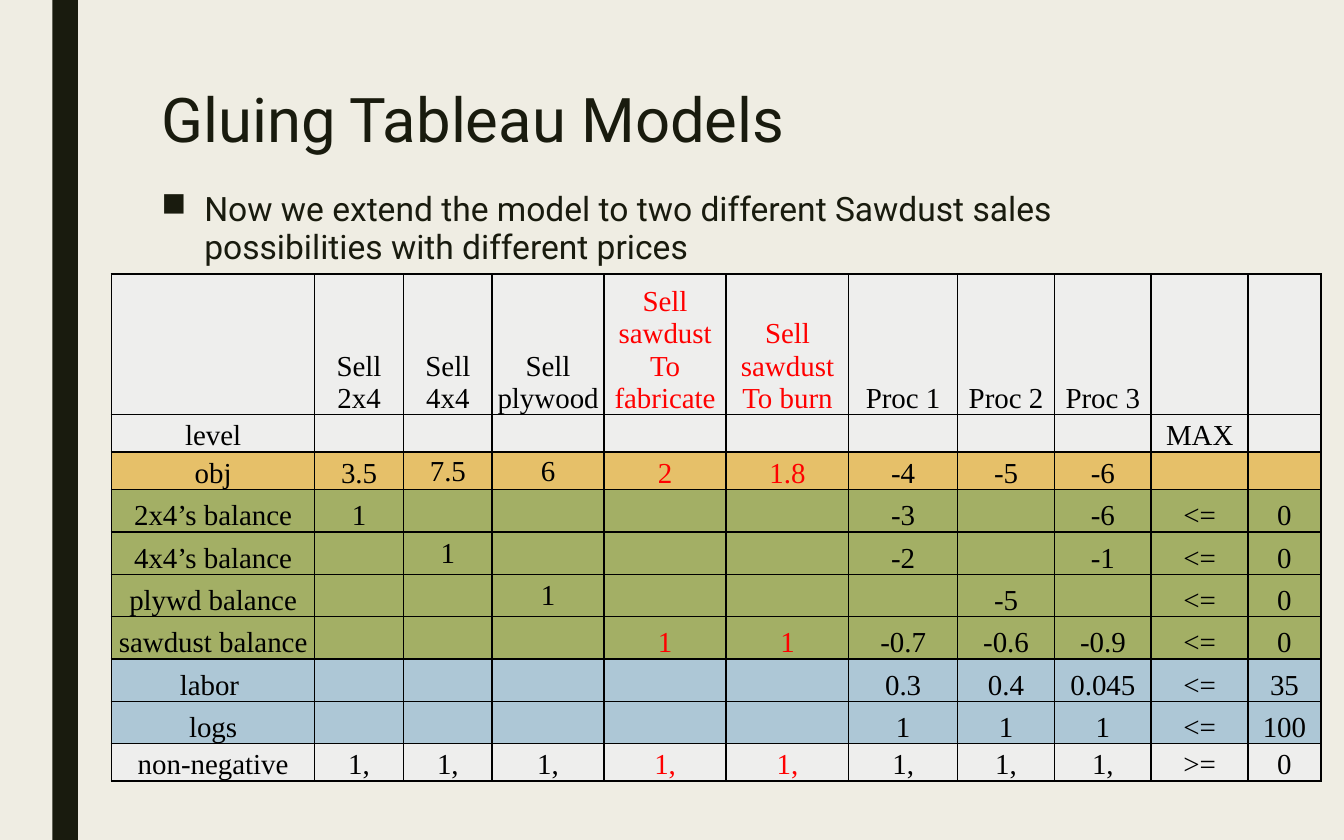
from lxml.etree import SubElement
from pptx import Presentation
from pptx.dml.color import RGBColor
from pptx.enum.shapes import MSO_SHAPE
from pptx.enum.text import MSO_ANCHOR, PP_ALIGN
from pptx.oxml.ns import qn
from pptx.util import Inches, Pt

WIDE, HIGH = Inches(10), Inches(6.25)
HUES = {
    "back": "EFEDE3", "dark": "191B0E", "black": "000000", "red": "FF0000",
    "pale": "EEEEED", "gold": "E6C069", "green": "A3AF65", "blue": "ADC7D6",
}
COLS = [1.51, 0.66, 0.66, 0.83, 0.91, 0.91, 0.81, 0.72, 0.72, 0.72, 0.54]
SIZE = 15.5
RED_COLS = (4, 5)
MID_COLS = (2, 3)
MID_ROWS = range(2, 6)
ROWS = [
    ("pale", 1.0, ["", "Sell 2x4", "Sell 4x4", "Sell plywood", "Sell sawdust\nTo fabricate",
                   "Sell sawdust\nTo burn", "Proc 1", "Proc 2", "Proc 3", "", ""]),
    ("pale", 0.28, ["level", "", "", "", "", "", "", "", "", "MAX", ""]),
    ("gold", 0.28, ["obj", "3.5", "7.5", "6", "2", "1.8", "-4", "-5", "-6", "", ""]),
    ("green", 0.315, ["2x4’s balance", "1", "", "", "", "", "-3", "", "-6", "<=", "0"]),
    ("green", 0.315, ["4x4’s balance", "", "1", "", "", "", "-2", "", "-1", "<=", "0"]),
    ("green", 0.315, ["plywd balance", "", "", "1", "", "", "", "-5", "", "<=", "0"]),
    ("green", 0.315, ["sawdust balance", "", "", "", "1", "1", "-0.7", "-0.6", "-0.9", "<=", "0"]),
    ("blue", 0.315, ["labor ", "", "", "", "", "", "0.3", "0.4", "0.045", "<=", "35"]),
    ("blue", 0.315, ["logs", "", "", "", "", "", "1", "1", "1", "<=", "100"]),
    ("pale", 0.28, ["non-negative"] + ["1,"] * 8 + [">=", "0"]),
]


def tint(name):
    return RGBColor.from_string(HUES[name])


def share(left, top, width, height):
    return (round(WIDE * left / 100), round(HIGH * top / 100),
            round(WIDE * width / 100), round(HIGH * height / 100))


def write(frame, text, font="Roboto", size=18, hue="dark", align=PP_ALIGN.LEFT,
          lead=1.0, before=0, after=0, pads=(0.08, 0.04, 0.08, 0.04),
          anchor=MSO_ANCHOR.TOP, mark=None):
    frame.word_wrap = True
    frame.vertical_anchor = anchor
    (frame.margin_left, frame.margin_top,
     frame.margin_right, frame.margin_bottom) = map(Inches, pads)
    for i, line in enumerate(text.split("\n")):
        para = frame.add_paragraph() if i else frame.paragraphs[0]
        para.alignment = align
        para.line_spacing = lead
        para.space_before, para.space_after = Pt(before), Pt(after)
        if mark:
            props = para._p.get_or_add_pPr()
            props.set("marL", str(Inches(0.32)))
            props.set("indent", str(Inches(-0.32)))
            SubElement(props, qn("a:buChar"), char=mark)
        if line:
            run = para.add_run()
            run.text = line
            run.font.name, run.font.size = font, Pt(size)
            run.font.color.rgb = tint(hue)
        else:
            SubElement(para._p, qn("a:endParaRPr"), sz=str(round(size * 100)))


def edge(cell):
    props = cell._tc.get_or_add_tcPr()
    for side in ("lnL", "lnR", "lnT", "lnB"):
        line = SubElement(props, qn(f"a:{side}"), w=str(Pt(1)))
        fill = SubElement(line, qn("a:solidFill"))
        SubElement(fill, qn("a:srgbClr"), val=HUES["black"])


def add_bar(slide, box):
    bar = slide.shapes.add_shape(MSO_SHAPE.RECTANGLE, *box)
    bar.shadow.inherit = False
    bar.fill.solid()
    bar.fill.fore_color.rgb = tint("dark")
    bar.line.fill.background()


def add_title(slide, box):
    title = slide.shapes.title
    title.left, title.top, title.width, title.height = box
    write(title.text_frame, "Gluing Tableau Models", size=33, lead=0.89)


def add_body(slide, box):
    body = slide.shapes.add_textbox(*box)
    write(body.text_frame,
          "Now we extend the model to two different Sawdust sales possibilities "
          "with different prices", lead=0.94, before=7.5, after=1.5, mark="■")


def add_grid(slide, box):
    left, top, width, height = box
    grid = slide.shapes.add_table(len(ROWS), len(COLS), *box).table
    grid.first_row = grid.horz_banding = False
    for col, part in zip(grid.columns, COLS):
        col.width = round(width * part / sum(COLS))
    total = sum(part for _, part, _ in ROWS)
    for r, (hue, part, texts) in enumerate(ROWS):
        grid.rows[r].height = round(height * part / total)
        for c, text in enumerate(texts):
            cell = grid.cell(r, c)
            mid = r in MID_ROWS and c in MID_COLS
            edge(cell)
            cell.fill.solid()
            cell.fill.fore_color.rgb = tint(hue)
            write(cell.text_frame, text, font="Times New Roman", size=SIZE,
                  hue="red" if c in RED_COLS else "black",
                  align=PP_ALIGN.CENTER, pads=(0, 0, 0, 0))
            cell.vertical_anchor = MSO_ANCHOR.MIDDLE if mid else MSO_ANCHOR.BOTTOM
            cell.margin_left = cell.margin_top = cell.margin_right = Inches(0.01)
            cell.margin_bottom = 0


def main():
    deck = Presentation()
    deck.slide_width, deck.slide_height = WIDE, HIGH
    slide = deck.slides.add_slide(deck.slide_layouts[5])
    slide.background.fill.solid()
    slide.background.fill.fore_color.rgb = tint("back")
    add_bar(slide, share(3.9, 0, 1.9, 100))
    add_title(slide, share(11.2, 10.08, 78.8, 10.72))
    add_body(slide, share(11.2, 22.08, 78.8, 63.52))
    add_grid(slide, share(8.3, 32.64, 90, 59.7))
    deck.save("out.pptx")


if __name__ == "__main__":
    main()
